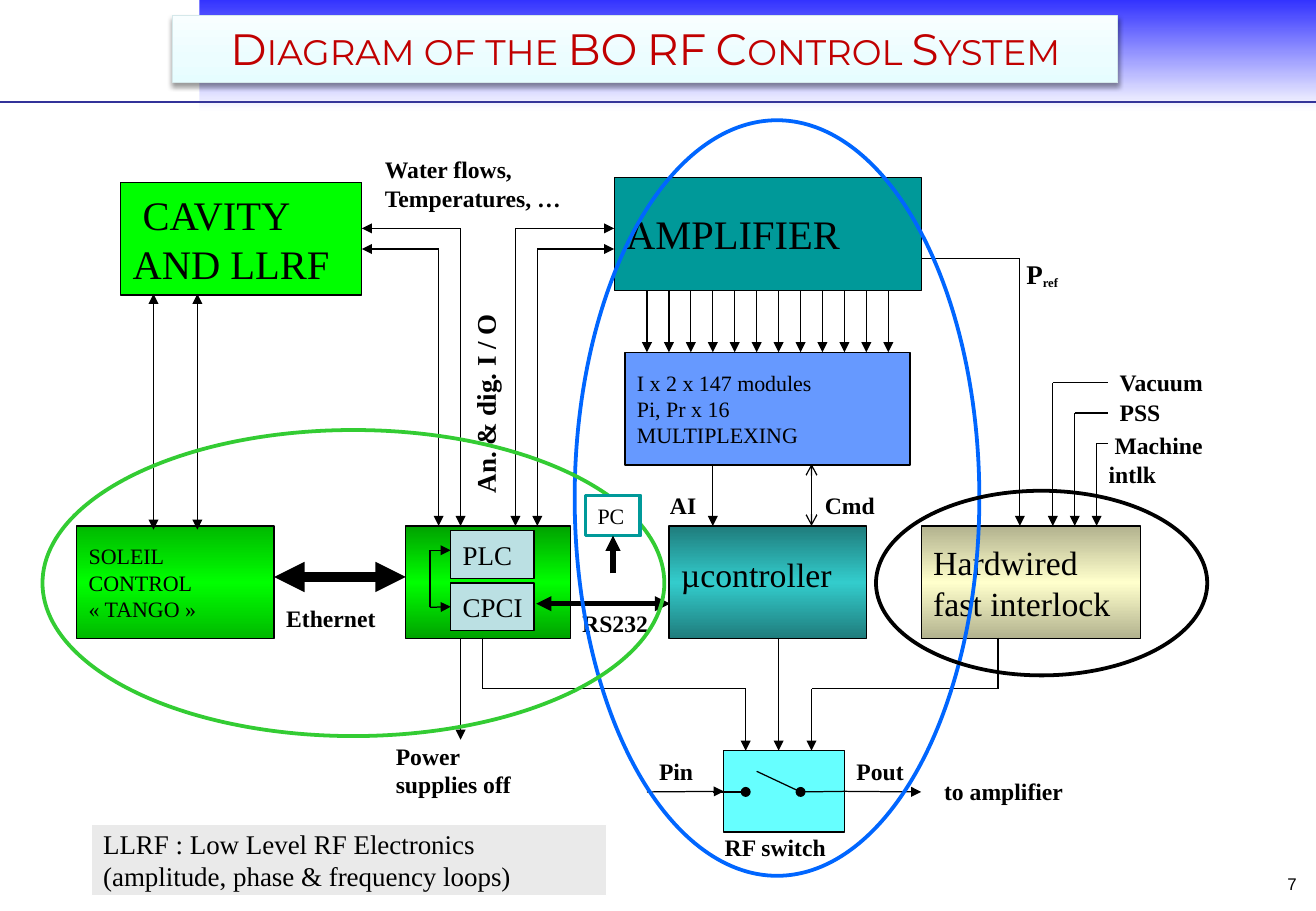
import pptx
import pptx.dml.color
import pptx.enum.shapes
import pptx.enum.text
import pptx.oxml
import pptx.oxml.ns
import pptx.util

COLORS = {
    "black": "000000", "white": "FFFFFF", "title": "C00000", "title_edge": "D5E8EA",
    "rule": "333399", "teal": "009999", "lime": "00FF00", "blue": "6699FF",
    "cyan": "66FFFF", "module": "BBE0E3", "note": "EAEAEA",
    "rf_loop": "0066FF", "plc_loop": "33CC33",
}
HEADER_FADE = [(0, "3333FF"), (100, "FFFFFF")]
TITLE_FADE = [(0, "E6FDFF"), (35, "ECFDFF"), (100, "F8FEFF")]
SHAPE = pptx.enum.shapes.MSO_SHAPE
ALIGN = pptx.enum.text.PP_ALIGN
ANCHOR = pptx.enum.text.MSO_ANCHOR


def band(edge, middle):
    return [(0, edge), (50, middle), (100, edge)]


class Diagram:
    """Draws boxes, labels and routed lines on a grid of 60 columns and 75 rows."""

    def __init__(self, deck):
        self.slide = deck.slides.add_slide(deck.slide_layouts[6])
        self.column = deck.slide_width / 60
        self.row = deck.slide_height / 75
        self.font = "Times New Roman"

    def place(self, column, row):
        return round(column * self.column), round(row * self.row)

    def color(self, name):
        return pptx.dml.color.RGBColor.from_string(COLORS[name])

    def add_xml(self, parent, markup, index=None):
        holder = pptx.oxml.parse_xml(f"<a:holder {pptx.oxml.ns.nsdecls('a')}>{markup}</a:holder>")
        parent.insert(len(parent) if index is None else index, holder[0])

    def set_text(self, shape, lines, size, color="black", bold=False, font=None,
                 align=ALIGN.LEFT, wrap=True, anchor=ANCHOR.TOP):
        frame = shape.text_frame
        frame.word_wrap = wrap
        frame.vertical_anchor = anchor
        frame.text = lines
        for paragraph in frame.paragraphs:
            paragraph.alignment = align
            for run in paragraph.runs:
                self.style(run, size, color, bold, font)

    def style(self, run, size, color="black", bold=False, font=None):
        run.font.name = font or self.font
        run.font.size = pptx.util.Pt(size)
        run.font.bold = bold
        run.font.color.rgb = self.color(color)

    def box(self, at, fill=None, line="black", weight=0.75, text=None, size=13,
            kind=SHAPE.RECTANGLE, fade=None, angle=90):
        shape = self.slide.shapes.add_shape(kind, *self.place(*at[:2]), *self.place(*at[2:]))
        shape.shadow.inherit = False
        if fade:
            stops = "".join(f'<a:gs pos="{pos * 1000}"><a:srgbClr val="{value}"/></a:gs>'
                            for pos, value in fade)
            self.add_xml(shape._element.spPr, f'<a:gradFill><a:gsLst>{stops}</a:gsLst>'
                         f'<a:lin ang="{angle * 60000}" scaled="0"/></a:gradFill>', 2)
        elif fill:
            shape.fill.solid()
            shape.fill.fore_color.rgb = self.color(fill)
        else:
            shape.fill.background()
        if line:
            shape.line.color.rgb = self.color(line)
            shape.line.width = pptx.util.Pt(weight)
        else:
            shape.line.fill.background()
        if text:
            self.set_text(shape, text, size, wrap=False, anchor=ANCHOR.MIDDLE)
        return shape

    def loop(self, at, line):
        return self.box(at, line=line, weight=2.25, kind=SHAPE.OVAL)

    def label(self, at, text, size=14, bold=True, **style):
        label = self.slide.shapes.add_textbox(*self.place(*at[:2]), *self.place(*at[2:]))
        self.set_text(label, text, size, bold=bold, **style)
        return label

    def route(self, *points, head=None, tail=None, color="black", weight=0.75,
              start=None, end=None):
        legs = list(zip(points, points[1:]))
        for number, (begin, finish) in enumerate(legs):
            first, last = number == 0, number == len(legs) - 1
            leg = self.slide.shapes.add_connector(
                pptx.enum.shapes.MSO_CONNECTOR.STRAIGHT, *self.place(*begin), *self.place(*finish))
            leg.line.color.rgb = self.color(color)
            leg.line.width = pptx.util.Pt(weight)
            if first and head:
                self.add_xml(leg.line._get_or_add_ln(), f'<a:headEnd type="{head}"/>')
            if last and tail:
                self.add_xml(leg.line._get_or_add_ln(), f'<a:tailEnd type="{tail}"/>')
            self.add_xml(leg._element.spPr, "<a:effectLst/>")
            if first and start:
                leg.begin_connect(*start)
            if last and end:
                leg.end_connect(*end)

    def title(self, at, words):
        plate = self.box(at, line="title_edge", fade=TITLE_FADE, angle=270)
        effects = plate._element.spPr.find(pptx.oxml.ns.qn("a:effectLst"))
        self.add_xml(effects, '<a:outerShdw blurRad="39370" dist="20320" dir="5400000">'
                     '<a:srgbClr val="000000"><a:alpha val="38000"/></a:srgbClr></a:outerShdw>')
        self.set_text(plate, "", 26, align=ALIGN.CENTER)
        for text, size in words:
            run = plate.text_frame.paragraphs[0].add_run()
            run.text = text
            self.style(run, size, "title", font="Montserrat")


def main():
    deck = pptx.Presentation()
    deck.slide_width = pptx.util.Inches(10.83)
    deck.slide_height = pptx.util.Inches(7.5)
    d = Diagram(deck)
    arrow, both = {"tail": "triangle"}, {"head": "triangle", "tail": "triangle"}

    d.box((0, 0, 60, 9.2), line=None, fade=HEADER_FADE)
    d.box((0, 0, 9.09, 9.9), "white", None)
    d.route((0, 8.4), (60, 8.4), color="rule", weight=1.5)
    d.title((7.87, 1.3, 43.1, 5.5), [
        ("D", 26), ("IAGRAM OF THE ", 21), ("BO", 26), (" ", 21), ("RF", 26), (" ", 21),
        ("C", 26), ("ONTROL ", 21), ("S", 26), ("YSTEM", 21)])

    d.box((28, 14.6, 14, 9.3), "teal", text="AMPLIFIER", size=24)
    d.box((5.5, 15, 11, 9.3), "lime", text=" CAVITY\nAND LLRF", size=24)
    d.box((3.5, 43.3, 9, 9.3), text="SOLEIL\nCONTROL\n« TANGO »", fade=band("00B900", "00FF00"))
    d.box((18.5, 43.3, 7.5, 9.3), fade=band("00A200", "00FF00"))
    controller = d.box((30.5, 43.3, 9, 9.3), text="µcontroller", size=20,
                       fade=band("1F7C7C", "33CCCC"))
    controller.text_frame.margin_bottom = pptx.util.Inches(0.18)
    d.box((42, 43.3, 10, 9.3), text="Hardwired\nfast interlock", size=20,
          fade=band("B2B28E", "FFFFCC"))
    d.box((28.5, 29, 13, 9.3), "blue", text="I x 2 x 147 modules\nPi, Pr x 16\nMULTIPLEXING")
    switch = d.box((33, 61.8, 5.5, 6.7), "cyan")
    d.box((4.16, 67.9, 23.5, 5.8), "note", "white", size=16,
          text="LLRF : Low Level RF Electronics\n(amplitude, phase & frequency loops)")
    cpci = d.box((20.55, 48, 3.8, 3.9), "module", text="CPCI", size=16)
    d.box((20.55, 43.7, 3.8, 3.9), "module", text="PLC", size=16)

    for probe in range(12):
        d.route((29.5 + probe, 23.9), (29.5 + probe, 29), **arrow)
    d.route((32.5, 38.2), (32.5, 43.3), **arrow)
    d.route((37, 38.2), (37, 43.3), head="arrow", tail="arrow")
    for side, lane, row in ((16.5, 21, 18.8), (16.5, 20, 20.5), (28, 23.5, 18.8), (28, 24.5, 20.5)):
        d.route((side, row), (lane, row), (lane, 43.3), **both)
    for lane in (7, 9):
        d.route((lane, 24.2), (lane, 43.6), **both)
    for lane, row in ((48, 31.5), (49, 34), (50, 36.5)):
        d.route((50.5, row), (lane, row), (lane, 43.3), **arrow)
    d.route((42, 21.3), (46.5, 21.3), (46.5, 43.3), **arrow)
    d.route((12.5, 47.5), (18.5, 47.5), weight=6, **both)
    d.route((24.45, 49.7), (30.55, 49.7), weight=3, **both)
    d.route((20.55, 45.3), (19.6, 45.3), (19.6, 50), (20.55, 50), end=(cpci, 1), **both)
    d.route((21, 52.5), (21, 60.9), **arrow)
    for source, port in ((22, 34), (45.5, 37)):
        d.route((source, 52.5), (source, 56.7), (port, 56.7), (port, 61.8), **arrow)
    d.route((35.5, 52.5), (35.5, 61.8), **arrow)
    d.route((29.5, 65.2), (33, 65.2), end=(switch, 1), **arrow)
    d.route((38.5, 65.2), (42, 65.2), start=(switch, 3), **arrow)
    d.route((38.5, 65.2), (36.5, 65.2), start=(switch, 3))
    d.route((36.5, 65.2), (34.5, 63.5), head="oval")
    d.route((34, 65.2), (32.5, 65.2), head="oval")

    for at, text in (
            ((30, 39.9, 3, 3.3), "AI"),
            ((37.06, 39.9, 4, 3.3), "Cmd"),
            ((12.5, 49.2, 8.5, 3.3), "Ethernet"),
            ((50.5, 29.8, 5.5, 3.3), "Vacuum"),
            ((50.5, 32.3, 4.5, 3.3), "PSS"),
            ((50, 35, 6, 5.7), " Machine intlk"),
            ((17, 12.3, 11, 5.7), "Water flows,\nTemperatures, …"),
            ((29.5, 61.8, 3, 3.3), "Pin"),
            ((38.5, 61.8, 4.5, 3.3), "Pout"),
            ((42.5, 63.5, 9, 3.3), "to amplifier"),
            ((17.5, 60.6, 7, 5.7), "Power supplies off"),
            ((32.5, 68.1, 6.5, 3.3), "RF switch"),
            ((26, 49.6, 4.5, 3.3), "RS232")):
        d.label(at, text)
    d.label((17.23, 30.9, 9.8, 3.7), "An. & dig. I / O", 16).rotation = 270
    reflected = d.label((46.25, 20.7, 4, 3.7), "P", 16)
    subscript = reflected.text_frame.paragraphs[0].add_run()
    subscript.text = "ref"
    d.style(subscript, 13, bold=True)
    subscript._r.get_or_add_rPr().set("baseline", "-16000")

    d.loop((26.2, 9.9, 18.45, 62.2), "rf_loop")
    d.loop((1.94, 35.4, 28.35, 25.2), "plc_loop")
    d.loop((39.94, 40.4, 15.1, 15.2), "black")
    pc = d.box((26.7, 40.8, 2.5, 3.3), "white", "teal", 2.25, "PC")
    d.route((27.95, 47.2), (27.95, 44.1), weight=3, end=(pc, 2), **arrow)
    d.label((55.73, 71.4, 3.93, 2.9), "7", 10, False, font="Arial", align=ALIGN.RIGHT)
    deck.save("out.pptx")


if __name__ == "__main__":
    main()
